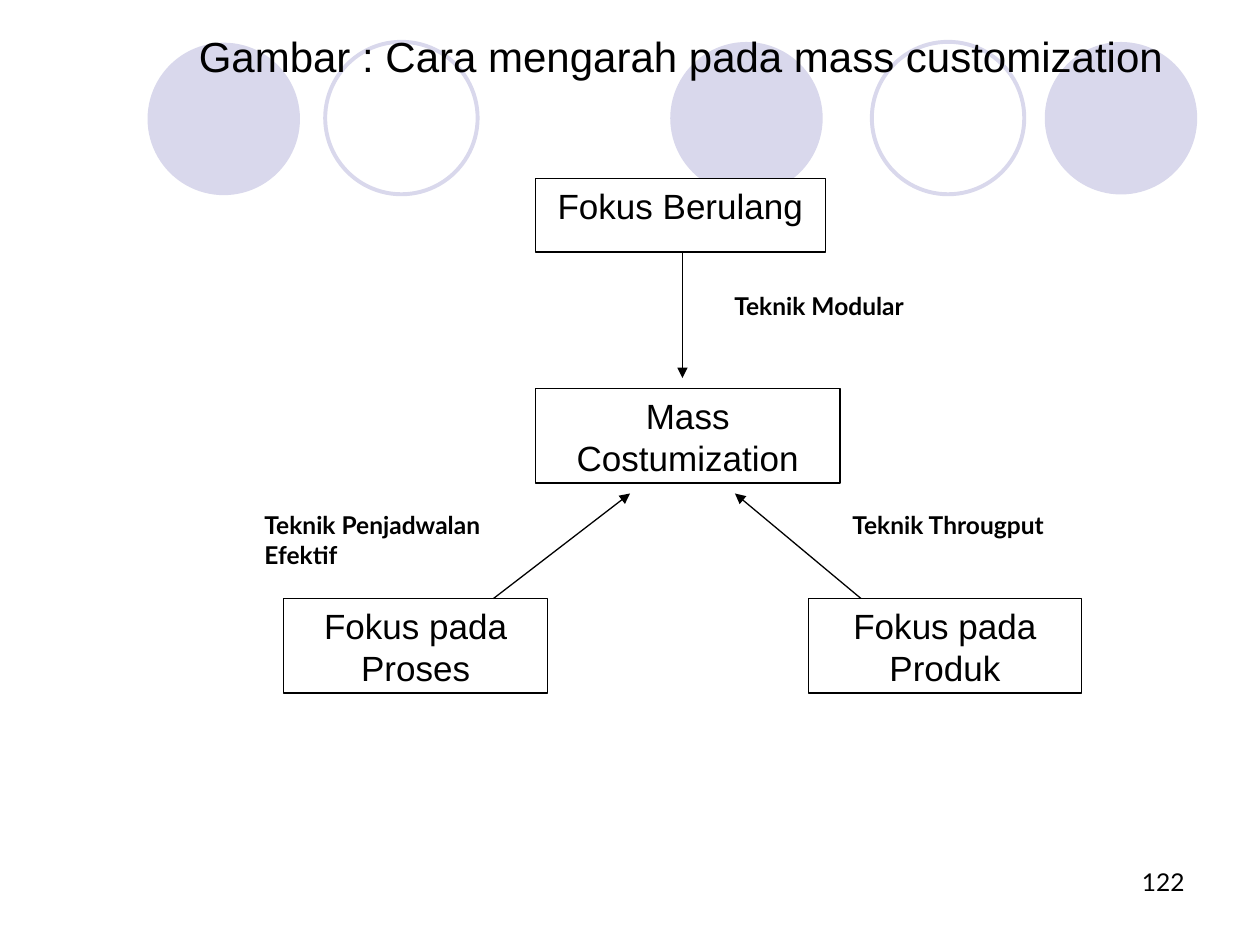
from lxml.etree import SubElement
from pptx import Presentation
from pptx.dml.color import RGBColor
from pptx.enum.shapes import MSO_CONNECTOR, MSO_SHAPE
from pptx.enum.text import MSO_ANCHOR, PP_ALIGN
from pptx.oxml.ns import qn
from pptx.util import Pt

COLORS = {"ink": "000000", "paper": "FFFFFF", "lavender": "D9D8EC"}
FORMATS = {
    "title": {"name": "Arial", "size": Pt(24)},
    "box": {"name": "Arial", "size": Pt(20)},
    "label": {"name": "Lato", "size": Pt(14), "bold": True},
    "number": {"name": "Lato", "size": Pt(14)},
}
CIRCLE_SIZE = 87.1
FILLED_CIRCLES = [(383, 24), (597, 24), (84.3, 24.4)]
OUTLINED_CIRCLES = [(498.2, 23.9), (185.8, 23.9)]
BOXES = [
    ("Fokus Berulang", 306, 102, 165.6, 42),
    ("Mass Costumization", 306, 222, 174, 54),
    ("Fokus pada Proses", 162, 342, 151, 54),
    ("Fokus pada Produk", 462, 342, 156, 54),
]
LABELS = [
    ("Teknik Modular", 412.5, 163, 123, 24),
    ("Teknik Througput", 480, 288, 150, 24),
    ("Teknik Penjadwalan Efektif", 144, 288, 162, 41),
]
ARROWS = [
    (282, 342, 360, 282),
    (390, 144, 390, 216),
    (492, 342, 420, 282),
]


def color(name):
    return RGBColor.from_string(COLORS[name])


def points(values):
    return [Pt(value) for value in values]


def write(shape, text, style, alignment=PP_ALIGN.LEFT, anchor=MSO_ANCHOR.TOP):
    frame = shape.text_frame
    frame.word_wrap = True
    frame.vertical_anchor = anchor
    paragraph = frame.paragraphs[0]
    paragraph.text = text
    paragraph.alignment = alignment
    for attribute, value in FORMATS[style].items():
        setattr(paragraph.font, attribute, value)
    paragraph.font.color.rgb = color("ink")


def add_figure(slide, kind, place, fill=None, line=None, line_width=0.75):
    """Add a preset shape; a missing fill or line colour leaves it empty."""
    shape = slide.shapes.add_shape(kind, *points(place))
    shape.shadow.inherit = False
    if fill:
        shape.fill.solid()
        shape.fill.fore_color.rgb = color(fill)
    else:
        shape.fill.background()
    if line:
        shape.line.color.rgb = color(line)
        shape.line.width = Pt(line_width)
    else:
        shape.line.fill.background()
    return shape


def add_circle(slide, corner, **look):
    place = (*corner, CIRCLE_SIZE, CIRCLE_SIZE)
    add_figure(slide, MSO_SHAPE.OVAL, place, **look)


def add_box(slide, text, *place):
    box = add_figure(slide, MSO_SHAPE.RECTANGLE, place, "paper", "ink")
    write(box, text, "box", PP_ALIGN.CENTER)


def add_text(slide, text, place, style, **layout):
    write(slide.shapes.add_textbox(*points(place)), text, style, **layout)


def add_arrow(slide, *ends):
    arrow = slide.shapes.add_connector(MSO_CONNECTOR.STRAIGHT, *points(ends))
    arrow.line.color.rgb = color("ink")
    arrow.line.width = Pt(0.75)
    SubElement(arrow.line._get_or_add_ln(), qn("a:tailEnd"), type="triangle")
    SubElement(arrow._element.spPr, qn("a:effectLst"))


def main():
    presentation = Presentation()
    presentation.slide_width, presentation.slide_height = Pt(720), Pt(540)
    slide = presentation.slides.add_slide(presentation.slide_layouts[6])

    for corner in FILLED_CIRCLES:
        add_circle(slide, corner, fill="lavender")
    for corner in OUTLINED_CIRCLES:
        add_circle(slide, corner, line="lavender", line_width=2.25)

    add_text(slide, "122", (516, 492, 168, 36), "number", alignment=PP_ALIGN.RIGHT)
    add_text(slide, "Gambar : Cara mengarah pada mass customization",
             (106.5, 16.5, 613.5, 31), "title", anchor=MSO_ANCHOR.MIDDLE)

    for box in BOXES:
        add_box(slide, *box)
    for text, *place in LABELS:
        add_text(slide, text, place, "label")
    for ends in ARROWS:
        add_arrow(slide, *ends)

    presentation.save("out.pptx")


if __name__ == "__main__":
    main()
